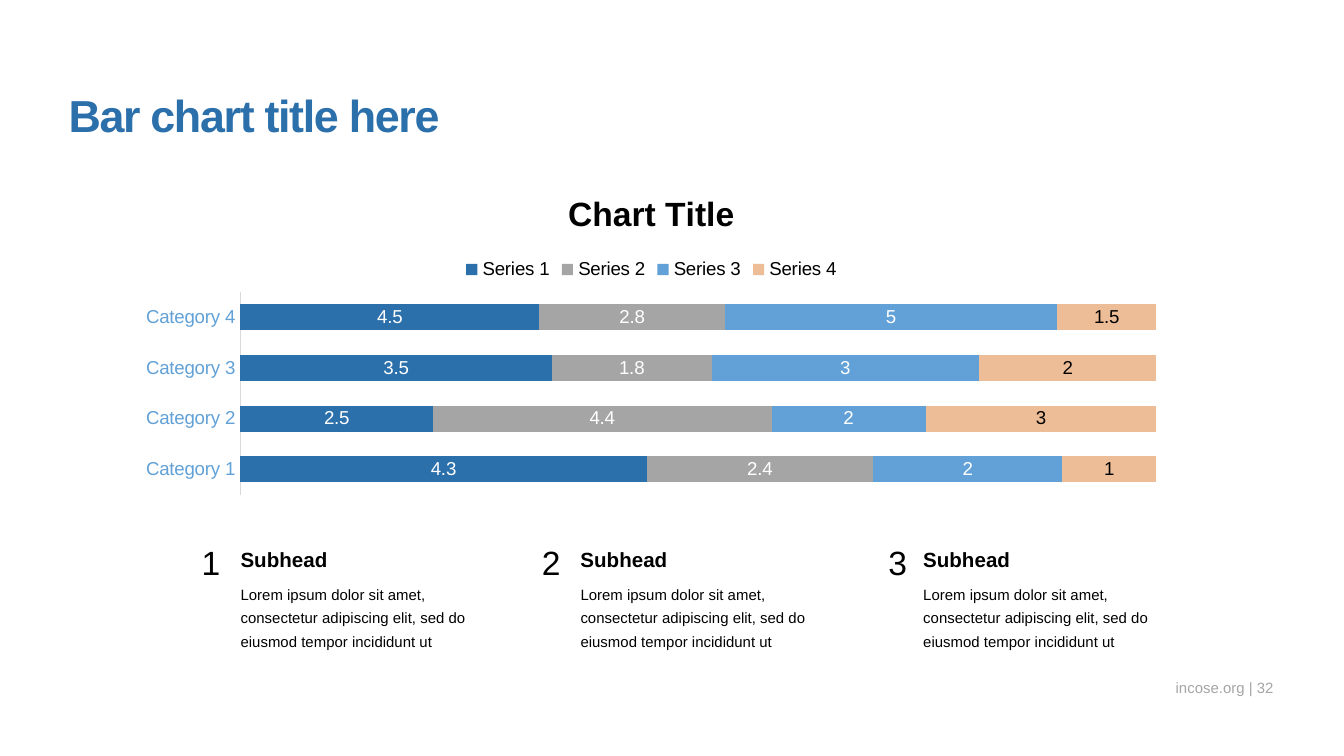
from pptx import Presentation
from pptx.chart.data import CategoryChartData
from pptx.dml.color import RGBColor
from pptx.enum import chart as ch, text as tx
from pptx.util import Pt

FONT = "Arial"
COLORS = {
    "blue": "2B6FAB",
    "gray": "A5A5A5",
    "sky": "61A1D7",
    "peach": "EDBD97",
    "rule": "D9D9D9",
    "white": "FFFFFF",
    "black": "000000",
}
SERIES = [
    ("Series 1", (4.3, 2.5, 3.5, 4.5), "blue", "white"),
    ("Series 2", (2.4, 4.4, 1.8, 2.8), "gray", "white"),
    ("Series 3", (2, 2, 3, 5), "sky", "white"),
    ("Series 4", (1, 3, 2, 1.5), "peach", "black"),
]
BODY = ("Lorem ipsum dolor sit amet, consectetur adipiscing elit, "
        "sed do eiusmod tempor incididunt ut")
NOTES = [("1", 100.8, 128.9), ("2", 283, 311), ("3", 468.7, 494.6)]


def color(name):
    return RGBColor.from_string(COLORS[name])


def style(font, size, tint="black", bold=False):
    font.name = FONT
    font.size = Pt(size)
    font.bold = bold
    font.color.rgb = color(tint)


def add_text(slide, words, box, size, tint="black", bold=False,
             align="LEFT", anchor="TOP", lead=1.0):
    frame = slide.shapes.add_textbox(*map(Pt, box)).text_frame
    frame.margin_left = frame.margin_right = 0
    frame.margin_top = frame.margin_bottom = 0
    frame.word_wrap = True
    frame.vertical_anchor = getattr(tx.MSO_ANCHOR, anchor)
    para = frame.paragraphs[0]
    para.text = words
    para.alignment = getattr(tx.PP_ALIGN, align)
    para.line_spacing = lead
    style(para.font, size, tint, bold)
    return para


def add_bars(slide):
    data = CategoryChartData()
    data.categories = [f"Category {n}" for n in range(1, 5)]
    for name, values, _, _ in SERIES:
        data.add_series(name, values)
    box = map(Pt, (67, 92.2, 563.8, 176.4))
    chart = slide.shapes.add_chart(
        ch.XL_CHART_TYPE.BAR_STACKED_100, *box, data).chart
    style(chart.font, 10)

    chart.has_title = True
    title = chart.chart_title.text_frame.paragraphs[0]
    title.text = "Chart Title"
    style(title.font, 18, bold=True)
    chart.has_legend = True
    chart.legend.position = ch.XL_LEGEND_POSITION.TOP
    chart.legend.include_in_layout = False
    style(chart.legend.font, 10)

    axis = chart.category_axis
    axis.major_tick_mark = ch.XL_TICK_MARK.NONE
    axis.format.line.color.rgb = color("rule")
    axis.format.line.width = Pt(0.75)
    style(axis.tick_labels.font, 10, "sky")
    chart.value_axis.has_major_gridlines = False
    chart.value_axis.visible = False

    plot = chart.plots[0]
    plot.vary_by_categories = False
    plot.gap_width = 95
    plot.overlap = 100
    for bar, (_, _, fill, ink) in zip(plot.series, SERIES):
        bar.format.fill.solid()
        bar.format.fill.fore_color.rgb = color(fill)
        labels = bar.data_labels
        labels.show_value = True
        style(labels.font, 10, ink)


def add_note(slide, digit, left, edge):
    add_text(slide, digit, (left, 290.2, 24.5, 21.6), 18, align="CENTER")
    add_text(slide, BODY, (edge, 311, 121, 31), 8, lead=1.3)
    add_text(slide, "Subhead", (edge, 294.5, 108, 18), 11, bold=True, lead=0.9)


def main():
    deck = Presentation()
    deck.slide_width, deck.slide_height = Pt(720), Pt(405)
    slide = deck.slides.add_slide(deck.slide_layouts[6])
    add_text(slide, "incose.org | 32", (601, 359.3, 81.4, 13.7), 8, "gray",
             align="RIGHT", anchor="BOTTOM", lead=1.5)
    title = add_text(slide, "Bar chart title here", (36.7, 46.8, 647.3, 28.8),
                     24, "blue", bold=True)
    title.runs[0].font._element.set("spc", "-70")
    add_bars(slide)
    for note in NOTES:
        add_note(slide, *note)
    deck.save("out.pptx")


if __name__ == "__main__":
    main()
